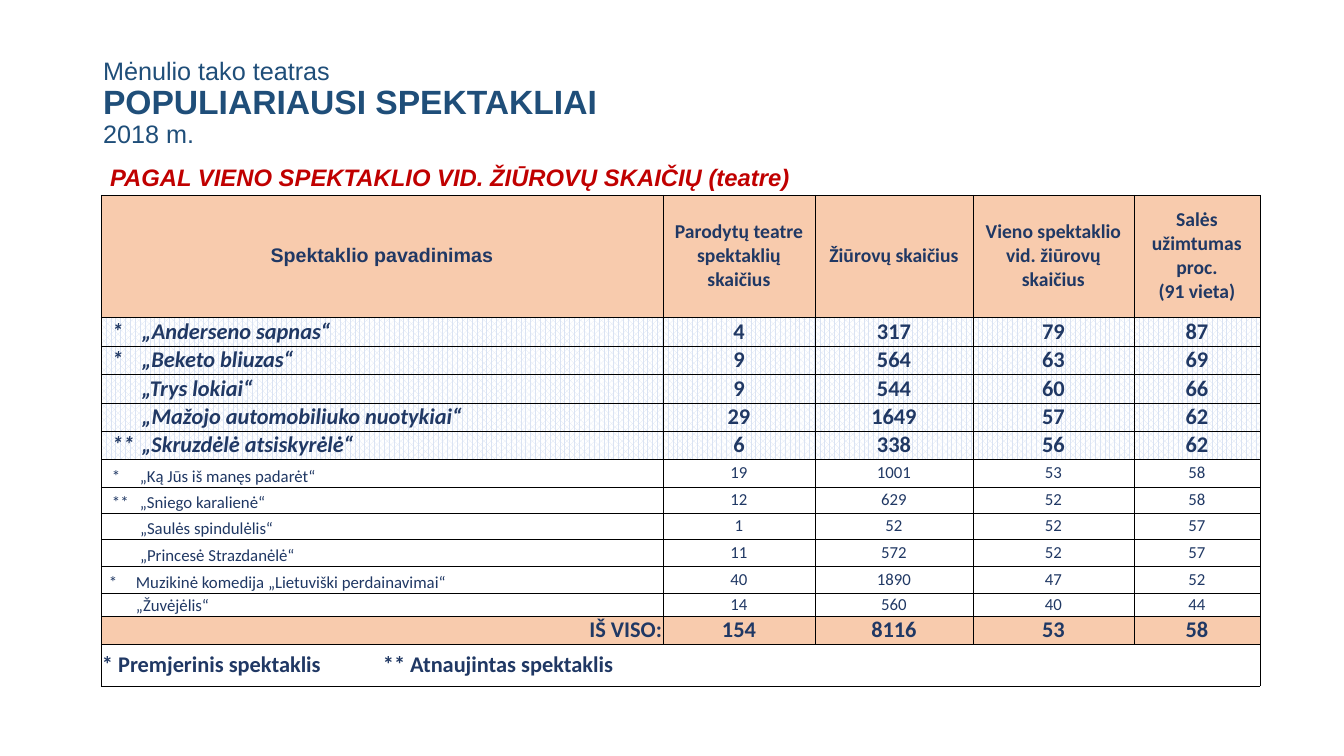
import copy
from dataclasses import dataclass

import pptx
import pptx.dml.color
import pptx.enum.dml
import pptx.enum.text
import pptx.oxml
import pptx.oxml.ns
import pptx.util

EMU_PER_PX = 914400 / 100.8
PX_PER_POINT = 1.4
ALIGN = pptx.enum.text.PP_ALIGN
ANCHOR = pptx.enum.text.MSO_ANCHOR


@dataclass(frozen=True)
class Theme:
    heading: str = "1F4E79"
    accent: str = "C00000"
    ink: str = "203864"
    band: str = "F8CBAD"
    pattern: str = "DAE3F3"
    paper: str = "FFFFFF"
    border: str = "000000"
    heading_font: str = "Arial"
    table_font: str = "Calibri"
    heading_size: int = 24
    line_size: int = 18
    subtitle_size: int = 17
    header_size: int = 14
    top_size: int = 16
    plain_size: int = 12


THEME = Theme()


@dataclass(frozen=True)
class Show:
    mark: str
    name: str
    figures: tuple[int, ...]
    height: int
    top: bool = False
    mark_x: int = 10
    name_x: int = 38


SHOWS = [
    Show("*", "„Anderseno sapnas“", (4, 317, 79, 87), 29, True, name_x=40),
    Show("*", "„Beketo bliuzas“", (9, 564, 63, 69), 28, True, name_x=40),
    Show("", "„Trys lokiai“", (9, 544, 60, 66), 29, True, name_x=40),
    Show("", "„Mažojo automobiliuko nuotykiai“", (29, 1649, 57, 62), 28, True, name_x=40),
    Show("**", "„Skruzdėlė atsiskyrėlė“", (6, 338, 56, 62), 28, True, name_x=40),
    Show("*", "„Ką Jūs iš manęs padarėt“", (19, 1001, 53, 58), 28),
    Show("**", "„Sniego karalienė“", (12, 629, 52, 58), 26),
    Show("", "„Saulės spindulėlis“", (1, 52, 52, 57), 26),
    Show("", "„Princesė Strazdanėlė“", (11, 572, 52, 57), 27),
    Show("*", "Muzikinė komedija „Lietuviški perdainavimai“", (40, 1890, 47, 52), 27, mark_x=7, name_x=34),
    Show("", "„Žuvėjėlis“", (14, 560, 40, 44), 23, name_x=34),
]
HEADERS = [
    "Spektaklio pavadinimas",
    "Parodytų teatre spektaklių skaičius",
    "Žiūrovų skaičius",
    "Vieno spektaklio vid. žiūrovų skaičius",
    "Salės užimtumas proc.\n(91 vieta)",
]
TOTALS = ("IŠ VISO:", 154, 8116, 53, 58)
COLUMN_WIDTHS = (562, 152, 158, 161, 126)
HEADER_HEIGHT, TOTAL_HEIGHT, LEGEND_HEIGHT = 122, 28, 42
LEGEND_GAP = 57
# Glyph widths of the table font, in ems
MARK_EM, SPACE_EM = 0.5, 0.23


def px(length: float) -> int:
    return round(length * EMU_PER_PX)


def rgb(colour: str) -> pptx.dml.color.RGBColor:
    return pptx.dml.color.RGBColor.from_string(colour)


def style(font, colour: str, size: int, name: str, bold: bool = False, italic: bool = False) -> None:
    values = {"size": pptx.util.Pt(size), "name": name, "bold": bold, "italic": italic}
    for attribute, value in values.items():
        setattr(font, attribute, value)
    font.color.rgb = rgb(colour)


def place(holder, left: int, top: int, width: int, height: int, anchor) -> None:
    for attribute, value in {"left": left, "top": top, "width": width, "height": height}.items():
        setattr(holder, attribute, px(value))
    frame = holder.text_frame
    frame.auto_size = pptx.enum.text.MSO_AUTO_SIZE.NONE
    frame.vertical_anchor = anchor
    frame.word_wrap = True


def add_element(parent, tag: str, index: int | None = None, **attributes):
    element = pptx.oxml.parse_xml(f"<a:{tag} {pptx.oxml.ns.nsdecls('a')}/>")
    for key, value in attributes.items():
        element.set(key, str(value))
    parent.insert(len(parent) if index is None else index, element)
    return element


def set_indent(paragraph, start: int) -> None:
    properties = paragraph._p.get_or_add_pPr()
    properties.set("marL", str(px(start)))
    properties.set("indent", "0")


def append_after_gap(paragraph, text: str, gap: float) -> None:
    """Add text after one space that is widened by gap px."""
    look = paragraph.runs[0]._r.rPr
    for part, spacing in ((" ", gap), (text, 0)):
        run = paragraph.add_run()
        run.text = part
        run._r.insert(0, copy.deepcopy(look))
        run._r.rPr.set("spc", str(round(spacing / PX_PER_POINT * 100)))


def draw_borders(cell) -> None:
    properties = cell._tc.get_or_add_tcPr()
    for index, side in enumerate(("lnL", "lnR", "lnT", "lnB")):
        line = add_element(properties, side, index, w=3175)
        add_element(add_element(line, "solidFill"), "srgbClr", val=THEME.border)


def paint(cell, colour: str | None = None, patterned: bool = False) -> None:
    if patterned:
        cell.fill.patterned()
        cell.fill.pattern = pptx.enum.dml.MSO_PATTERN.PERCENT_70
        cell.fill.fore_color.rgb = rgb(THEME.pattern)
        cell.fill.back_color.rgb = rgb(THEME.paper)
    elif colour:
        cell.fill.solid()
        cell.fill.fore_color.rgb = rgb(colour)
    else:
        cell.fill.background()


def write(cell, text: str, size: int, align=ALIGN.CENTER, anchor=ANCHOR.MIDDLE,
          font: str = THEME.table_font, bold: bool = True, italic: bool = False) -> None:
    cell.text_frame.text = text
    cell.vertical_anchor = anchor
    for paragraph in cell.text_frame.paragraphs:
        paragraph.alignment = align
        for run in paragraph.runs:
            style(run.font, THEME.ink, size, font, bold, italic)


def write_heading(title) -> None:
    place(title, 93, 50, 1159, 104, ANCHOR.BOTTOM)
    paragraph = title.text_frame.paragraphs[0]
    paragraph.alignment = ALIGN.LEFT
    paragraph.line_spacing = 0.9
    lines = [("Mėnulio tako teatras", False), ("POPULIARIAUSI SPEKTAKLIAI", True), ("2018 m.", False)]
    for index, (text, main_line) in enumerate(lines):
        if index:
            paragraph._p.add_br().append(copy.deepcopy(run._r.rPr))
        run = paragraph.add_run()
        run.text = text
        size = THEME.heading_size if main_line else THEME.line_size
        style(run.font, THEME.heading, size, THEME.heading_font, main_line)


def write_subtitle(body) -> None:
    place(body, 100, 163, 1159, 43, ANCHOR.TOP)
    paragraph = body.text_frame.paragraphs[0]
    paragraph.line_spacing = 0.8
    paragraph.space_before = pptx.util.Pt(10)
    set_indent(paragraph, 0)
    add_element(paragraph._p.get_or_add_pPr(), "buNone")
    run = paragraph.add_run()
    run.text = "PAGAL VIENO SPEKTAKLIO VID. ŽIŪROVŲ SKAIČIŲ (teatre)"
    style(run.font, THEME.accent, THEME.subtitle_size, THEME.heading_font, True, True)


def write_show_name(cell, show: Show, size: int) -> None:
    write(cell, show.mark or show.name, size, ALIGN.LEFT, ANCHOR.BOTTOM, bold=show.top, italic=show.top)
    paragraph = cell.text_frame.paragraphs[0]
    set_indent(paragraph, show.mark_x if show.mark else show.name_x)
    if show.mark:
        glyphs = (MARK_EM * len(show.mark) + SPACE_EM) * size * PX_PER_POINT
        append_after_gap(paragraph, show.name, show.name_x - show.mark_x - glyphs)


def build_table(slide) -> None:
    heights = [HEADER_HEIGHT, *(show.height for show in SHOWS), TOTAL_HEIGHT, LEGEND_HEIGHT]
    table = slide.shapes.add_table(len(heights), len(COLUMN_WIDTHS), px(101), px(195),
                                   px(sum(COLUMN_WIDTHS)), px(sum(heights))).table
    table.first_row = table.horz_banding = False
    for column, width in zip(table.columns, COLUMN_WIDTHS):
        column.width = px(width)
    for row, height in zip(table.rows, heights):
        row.height = px(height)
    for cell in table.iter_cells():
        for side, margin in {"left": 1, "right": 1, "top": 0, "bottom": 0}.items():
            setattr(cell, f"margin_{side}", px(margin))
        paint(cell)
        draw_borders(cell)

    # Header and totals
    total_row = len(SHOWS) + 1
    for column, (header, total) in enumerate(zip(HEADERS, TOTALS)):
        first = column == 0
        write(table.cell(0, column), header, THEME.header_size,
              font=THEME.heading_font if first else THEME.table_font)
        write(table.cell(total_row, column), str(total), THEME.top_size,
              ALIGN.RIGHT if first else ALIGN.CENTER, ANCHOR.BOTTOM if first else ANCHOR.MIDDLE)
        for row in (0, total_row):
            paint(table.cell(row, column), THEME.band)

    # Shows
    for row, show in enumerate(SHOWS, start=1):
        size = THEME.top_size if show.top else THEME.plain_size
        write_show_name(table.cell(row, 0), show, size)
        for column, figure in enumerate(show.figures, start=1):
            write(table.cell(row, column), str(figure), size, bold=show.top)
        for column in range(len(COLUMN_WIDTHS)):
            paint(table.cell(row, column), patterned=show.top)

    # Legend
    legend = table.cell(total_row + 1, 0)
    legend.merge(table.cell(total_row + 1, len(COLUMN_WIDTHS) - 1))
    write(legend, "* Premjerinis spektaklis", THEME.top_size, ALIGN.LEFT)
    append_after_gap(legend.text_frame.paragraphs[0], "** Atnaujintas spektaklis", LEGEND_GAP)


def main() -> None:
    deck = pptx.Presentation()
    deck.slide_width, deck.slide_height = px(1344), px(756)
    slide = deck.slides.add_slide(deck.slide_layouts[1])
    write_heading(slide.shapes.title)
    write_subtitle(slide.placeholders[1])
    build_table(slide)
    deck.save("out.pptx")


if __name__ == "__main__":
    main()
